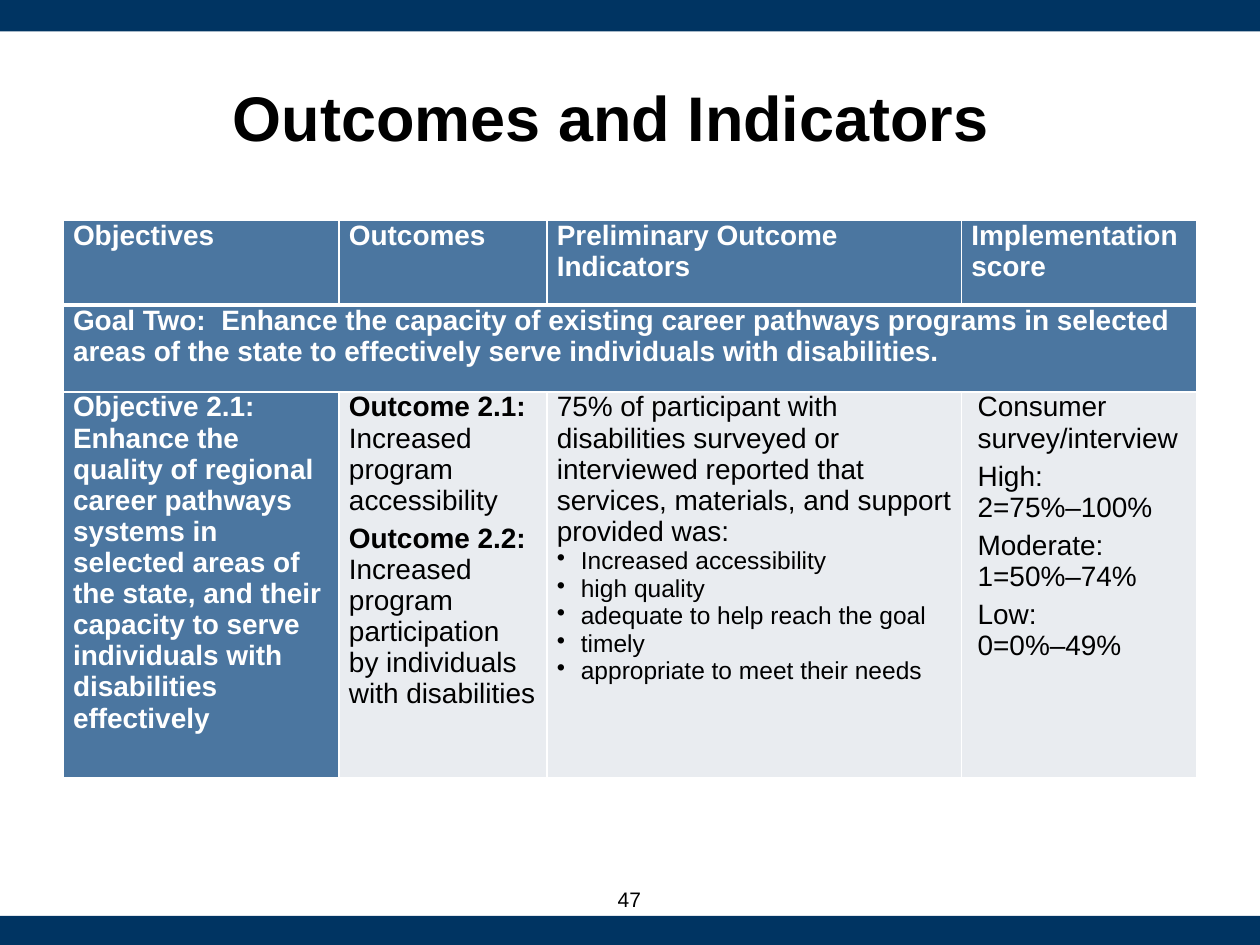
from lxml import etree
from pptx import Presentation
from pptx.dml.color import RGBColor
from pptx.enum.shapes import MSO_SHAPE as Shape
from pptx.enum.text import MSO_ANCHOR as Anchor, PP_ALIGN as Align
from pptx.oxml.ns import qn
from pptx.util import Inches, Pt

NAVY, BLUE, PALE = "003462", "4B76A0", "E9ECF0"
WHITE, BLACK = "FFFFFF", "000000"
COLS, ROWS = 20, 30  # layout grid


def rgb(value):
    return RGBColor.from_string(value)


def set_all(obj, values):
    for name, value in values.items():
        setattr(obj, name, value)


class Deck:
    font = "Arial"

    def __init__(self, width, height):
        self.prs = Presentation()
        set_all(self.prs, {"slide_width": Inches(width), "slide_height": Inches(height)})
        self.s = self.prs.slides.add_slide(self.prs.slide_layouts[6])
        self.unit_x = self.prs.slide_width / COLS
        self.unit_y = self.prs.slide_height / ROWS

    def box(self, col, row, cols, rows):
        return (round(col * self.unit_x), round(row * self.unit_y),
                round(cols * self.unit_x), round(rows * self.unit_y))

    def bar(self, *grid, fill):
        sp = self.s.shapes.add_shape(Shape.RECTANGLE, *self.box(*grid))
        sp.shadow.inherit = False
        sp.fill.solid()
        sp.fill.fore_color.rgb = rgb(fill)
        sp.line.fill.background()

    def add_runs(self, p, segments, size, color):
        """Each segment is (text, bold); a newline is a line break."""
        for text, bold in segments:
            for i, line in enumerate(text.split("\n")):
                if i:
                    p.add_line_break()
                r = p.add_run()
                r.text = line
                set_all(r.font, {"name": self.font, "size": Pt(size), "bold": bold})
                r.font.color.rgb = rgb(color)

    def text(self, *grid, text, size, bold=False, **margins):
        tf = self.s.shapes.add_textbox(*self.box(*grid)).text_frame
        set_all(tf, {"word_wrap": True, "vertical_anchor": Anchor.MIDDLE, **margins})
        p = tf.paragraphs[0]
        p.alignment = Align.CENTER
        self.add_runs(p, [(text, bold)], size, BLACK)

    def table(self, *grid, widths, heights):
        table = self.s.shapes.add_table(len(heights), len(widths), *self.box(*grid)).table
        for column, width in zip(table.columns, widths):
            column.width = Inches(width)
        for row, height in zip(table.rows, heights):
            row.height = Inches(height)
        return table

    def borders(self, cell, **widths):
        tc_pr = cell._tc.get_or_add_tcPr()
        for i, side in enumerate(("L", "R", "T", "B")):
            ln = etree.Element(qn("a:ln" + side), w=str(Pt(widths.get(side, 1))))
            fill = etree.SubElement(ln, qn("a:solidFill"))
            etree.SubElement(fill, qn("a:srgbClr"), val=WHITE)
            tc_pr.insert(i, ln)

    def cell(self, cell, paragraphs, fill, color=BLACK, size=16, space=0,
             indent=0, bullets=(), bottom=1):
        cell.fill.solid()
        cell.fill.fore_color.rgb = rgb(fill)
        self.borders(cell, B=bottom)
        side = Inches(0.08)
        set_all(cell, {"margin_left": side, "margin_right": side,
                       "margin_top": 0, "margin_bottom": 0})
        tf = cell.text_frame
        for i, segments in enumerate(paragraphs):
            p = tf.add_paragraph() if i else tf.paragraphs[0]
            set_all(p, {"space_before": Pt(space), "space_after": Pt(space)})
            if indent:
                p._p.get_or_add_pPr().set("marL", str(Inches(indent)))
            self.add_runs(p, segments, size, color)
        for text in bullets:
            p = tf.add_paragraph()
            p_pr = p._p.get_or_add_pPr()
            p_pr.set("marL", str(Inches(0.19)))
            p_pr.set("indent", str(-Inches(0.19)))
            etree.SubElement(p_pr, qn("a:buChar"), char="•")
            self.add_runs(p, [(text, False)], 14, color)


def main():
    deck = Deck(10, 7.5)

    # Bands, title and page number
    deck.bar(0, 0, COLS, 1, fill=NAVY)
    deck.bar(0, 29.08, COLS, 0.92, fill=NAVY)
    deck.text(1, 1.2, 18, 5, text="Outcomes and Indicators", size=36, bold=True,
              margin_right=Inches(0.4))
    deck.text(7.66, 28, 4.66, 1.08, text="47", size=12, margin_top=0, margin_bottom=0)

    # Table with header row
    table = deck.table(1, 7, 18, 17.68, widths=(2.19, 1.65, 3.29, 1.87),
                       heights=(0.67, 0.69, 3.06))
    headings = ("Objectives", "Outcomes", "Preliminary Outcome Indicators",
                "Implementation score")
    for i, heading in enumerate(headings):
        deck.cell(table.cell(0, i), [[(heading, True)]], BLUE, WHITE, bottom=3)

    # Goal row across all columns
    table.cell(1, 0).merge(table.cell(1, 3))
    deck.cell(table.cell(1, 0), [[(
        "Goal Two:  Enhance the capacity of existing career pathways programs in "
        "selected areas of the state to effectively serve individuals with "
        "disabilities.", True)]], BLUE, WHITE)

    # Objective row
    objective, outcomes, indicators, score = (table.cell(2, i) for i in range(4))
    deck.cell(objective, [[(
        "Objective 2.1: Enhance the quality of regional career pathways systems in "
        "selected areas of the state, and their capacity to serve individuals with "
        "disabilities effectively", True)]], BLUE, WHITE)
    deck.cell(outcomes, [
        [("Outcome 2.1: ", True), ("Increased program accessibility", False)],
        [("Outcome 2.2: ", True),
         ("Increased program participation by individuals with disabilities", False)],
    ], PALE, space=2)
    deck.cell(indicators, [[(
        "75% of participant with disabilities surveyed or interviewed reported that "
        "services, materials, and support provided was:", False)]], PALE,
        bullets=("Increased accessibility", "high quality",
                 "adequate to help reach the goal", "timely",
                 "appropriate to meet their needs"))
    levels = ("Consumer survey/interview", "High:\n2=75%–100%",
              "Moderate: 1=50%–74%", "Low:\n0=0%–49%")
    deck.cell(score, [[(level, False)] for level in levels], PALE, space=2, indent=0.05)

    deck.prs.save("out.pptx")


if __name__ == "__main__":
    main()
